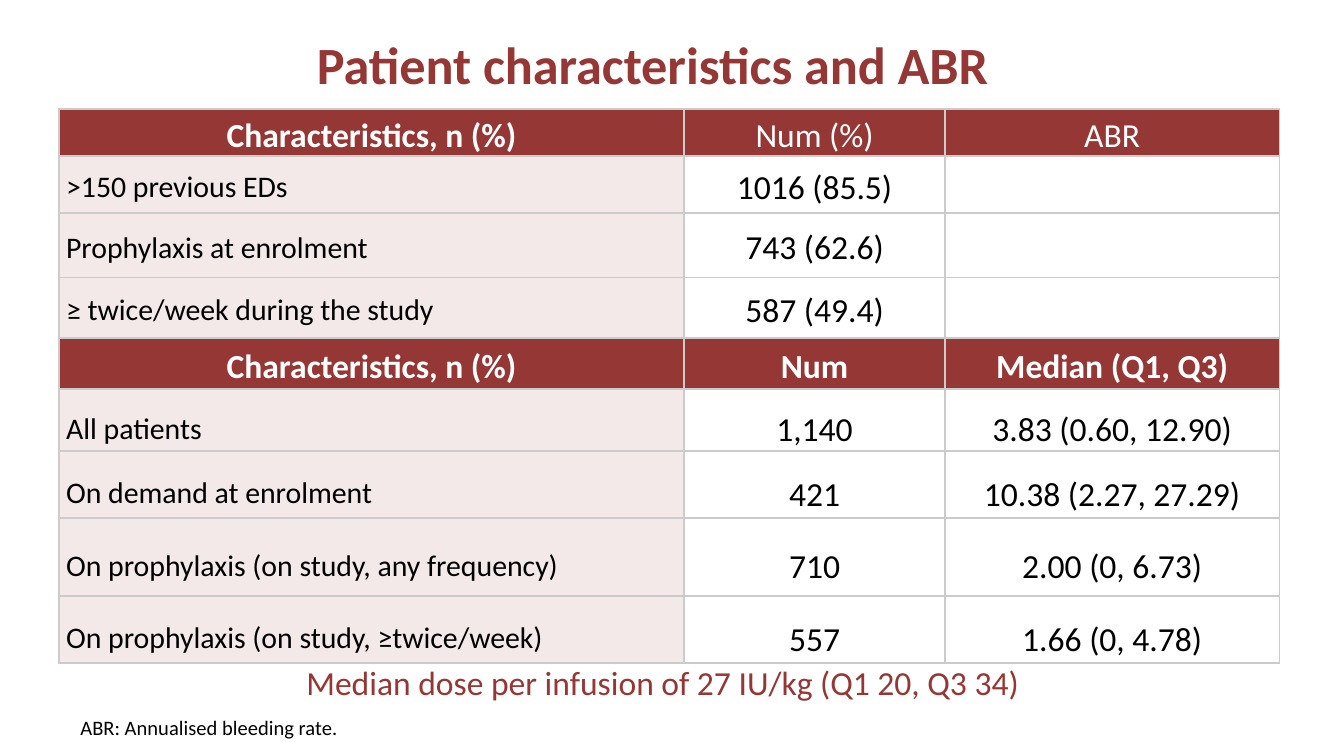
from dataclasses import dataclass

from lxml.etree import SubElement
from pptx import Presentation
from pptx.dml.color import RGBColor as Color
from pptx.enum.text import MSO_ANCHOR as Anchor, PP_ALIGN as Align
from pptx.oxml.ns import qn
from pptx.util import Cm, Pt


@dataclass(frozen=True)
class Theme:
    font: str = "Calibri"
    accent: str = "953735"
    tint: str = "F4E9E9"
    white: str = "FFFFFF"
    black: str = "000000"
    grid: str = "CBCBCB"
    title: int = 28
    body: int = 18
    label: int = 16
    note: int = 11


THEME = Theme()

COLUMNS = (11.81, 4.93, 6.32)

# Each section: line spacing, bold flags of its header, row heights, rows
SECTIONS = (
    (1.15, (True, False, False), (0.74, 1.07, 1.22, 1.14), (
        ("Characteristics, n (%)", "Num (%)", "ABR"),
        (">150 previous EDs", "1016 (85.5)", ""),
        ("Prophylaxis at enrolment", "743 (62.6)", ""),
        ("≥ twice/week during the study", "587 (49.4)", ""),
    )),
    (1.5, (True, True, True), (0.97, 1.07, 1.27, 1.47, 1.27), (
        ("Characteristics, n (%)", "Num", "Median (Q1, Q3)"),
        ("All patients", "1,140", "3.83 (0.60, 12.90)"),
        ("On demand at enrolment", "421", "10.38 (2.27, 27.29)"),
        ("On prophylaxis (on study, any frequency)", "710", "2.00 (0, 6.73)"),
        ("On prophylaxis (on study, ≥twice/week)", "557", "1.66 (0, 4.78)"),
    )),
)


def write(frame, text, *, size, color=THEME.black, bold=False,
          align=Align.LEFT, spacing=None):
    para = frame.paragraphs[0]
    para.alignment = align
    para.line_spacing = spacing
    span = para.add_run()
    span.text = text
    font = span.font
    font.name, font.size, font.bold = THEME.font, Pt(size), bold
    font.color.rgb = Color.from_string(color)


def add_text(slide, box, text, *, anchor=Anchor.TOP, bottom=0.13, **style):
    frame = slide.shapes.add_textbox(*map(Cm, box)).text_frame
    frame.word_wrap = True
    frame.vertical_anchor = anchor
    frame.margin_bottom = Cm(bottom)
    write(frame, text, **style)


def style_cell(cell, fill):
    cell.margin_left = cell.margin_right = Cm(0.13)
    cell.margin_top = cell.margin_bottom = 0
    cell.vertical_anchor = Anchor.MIDDLE
    # Borders go before the fill in the cell properties
    props = cell._tc.get_or_add_tcPr()
    for side in ("a:lnL", "a:lnR", "a:lnT", "a:lnB"):
        line = SubElement(props, qn(side), w=str(Pt(1)))
        solid = SubElement(line, qn("a:solidFill"))
        SubElement(solid, qn("a:srgbClr"), val=THEME.grid)
    cell.fill.solid()
    cell.fill.fore_color.rgb = Color.from_string(fill)


def add_patient_table(slide, box):
    count = sum(len(rows) for *_, rows in SECTIONS)
    table = slide.shapes.add_table(count, len(COLUMNS), *map(Cm, box)).table
    table.first_row = table.horz_banding = False
    for column, width in zip(table.columns, COLUMNS):
        column.width = Cm(width)

    lines = iter(table.rows)
    for spacing, bolds, heights, rows in SECTIONS:
        for index, (height, texts) in enumerate(zip(heights, rows)):
            line = next(lines)
            line.height = Cm(height)
            header = index == 0
            for place, (cell, text) in enumerate(zip(line.cells, texts)):
                label = place == 0 and not header
                fill = THEME.tint if label else THEME.white
                style_cell(cell, THEME.accent if header else fill)
                if text:
                    write(cell.text_frame, text,
                          size=THEME.label if label else THEME.body,
                          color=THEME.white if header else THEME.black,
                          bold=header and bolds[place],
                          align=Align.LEFT if label else Align.CENTER,
                          spacing=1.15 if header else spacing)


def add_title(slide, box):
    add_text(slide, box, "Patient characteristics and ABR",
             anchor=Anchor.MIDDLE, size=THEME.title, color=THEME.accent,
             bold=True, align=Align.CENTER)


def add_footer(slide, box):
    left, top, width, height = box
    # Dose statement
    add_text(slide, (left + 4.27, top, 14.3, 1.02),
             "Median dose per infusion of 27 IU/kg (Q1 20, Q3 34)",
             size=THEME.body, color=THEME.accent)
    # Abbreviation, resting on the bottom of the region
    add_text(slide, (left, top + 0.38, width, height - 0.38),
             "ABR: Annualised bleeding rate.",
             anchor=Anchor.BOTTOM, bottom=0, size=THEME.note)


def main():
    deck = Presentation()
    deck.slide_width, deck.slide_height = Cm(25.4), Cm(14.28)
    slide = deck.slides.add_slide(deck.slide_layouts[6])
    add_patient_table(slide, (1.12, 2.06, 23.06, 10.22))
    add_title(slide, (1.09, 0.36, 22.48, 1.7))
    add_footer(slide, (1.27, 12.37, 22.86, 1.6))
    deck.save("out.pptx")


if __name__ == "__main__":
    main()
